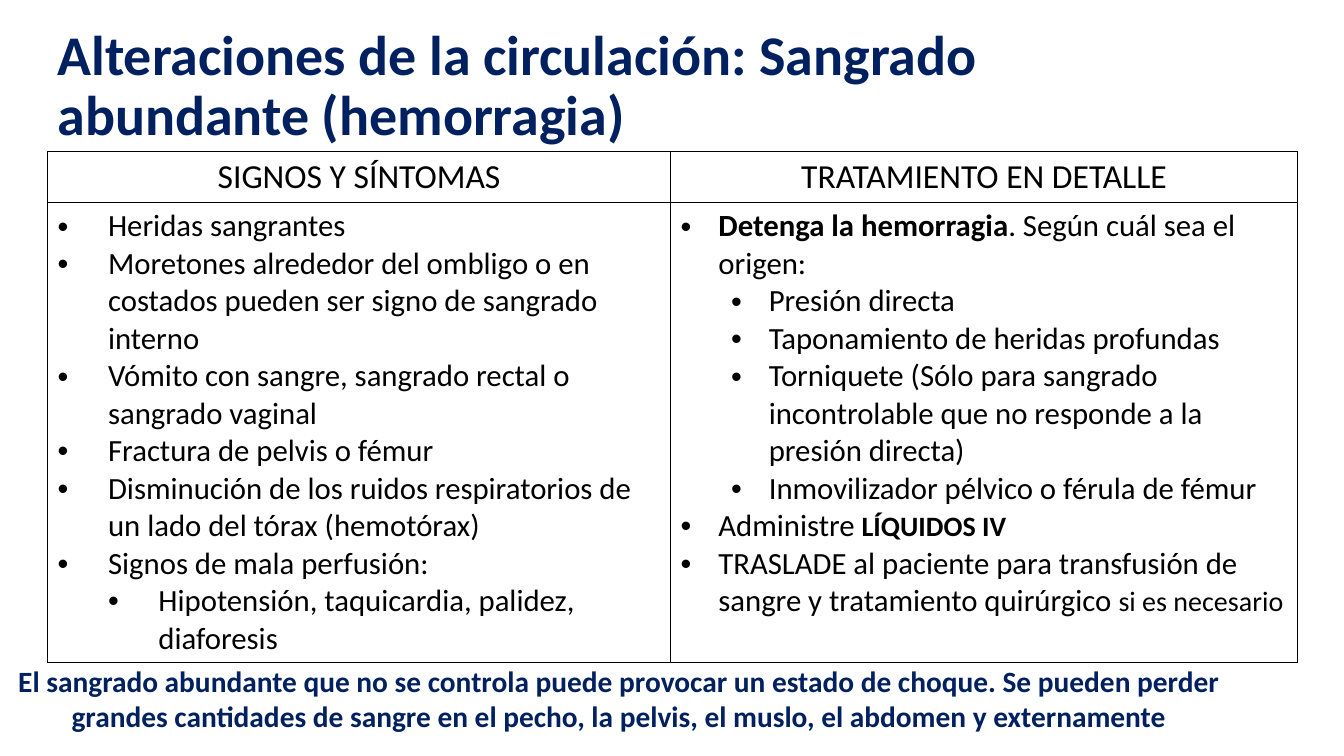
from dataclasses import dataclass

from lxml.etree import SubElement
from pptx import Presentation
from pptx.dml.color import RGBColor
from pptx.enum.text import MSO_ANCHOR, MSO_AUTO_SIZE, PP_ALIGN
from pptx.oxml.ns import qn
from pptx.util import Cm, Pt

FONT = "Calibri"
NAVY = "002060"
BLACK = "000000"
WHITE = "FFFFFF"
LEVEL_STEP = 1.27


@dataclass(frozen=True)
class Span:
    text: str
    size: float = 22
    bold: bool = False
    color: str = BLACK


@dataclass(frozen=True)
class Item:
    spans: tuple[Span, ...]
    level: int = 0


@dataclass(frozen=True)
class Column:
    heading: str
    width: float
    hanging: float
    items: tuple[Item, ...]


def item(text: str, level: int = 0) -> Item:
    return Item((Span(text),), level)


COLUMNS = (
    Column("SIGNOS Y SÍNTOMAS", 15.7, 1.27, (
        item("Heridas sangrantes"),
        item("Moretones alrededor del ombligo o en costados pueden ser signo de sangrado interno"),
        item("Vómito con sangre, sangrado rectal o sangrado vaginal"),
        item("Fractura de pelvis o fémur"),
        item("Disminución de los ruidos respiratorios de un lado del tórax (hemotórax)"),
        item("Signos de mala perfusión:"),
        item("Hipotensión, taquicardia, palidez, diaforesis", 1),
    )),
    Column("TRATAMIENTO EN DETALLE", 15.8, 0.95, (
        Item((Span("Detenga la hemorragia", bold=True), Span(". Según cuál sea el origen:"))),
        item("Presión directa", 1),
        item("Taponamiento de heridas profundas", 1),
        item("Torniquete (Sólo para sangrado incontrolable que no responde a la presión directa)", 1),
        item("Inmovilizador pélvico o férula de fémur", 1),
        Item((Span("Administre "), Span("LÍQUIDOS IV", 20, True))),
        Item((
            Span("TRASLADE al paciente para transfusión de sangre y tratamiento quirúrgico "),
            Span("si es necesario", 20),
        )),
    )),
)


def rgb(code: str) -> RGBColor:
    return RGBColor.from_string(code)


def add_span(paragraph, span: Span) -> None:
    run = paragraph.add_run()
    run.text = span.text
    run.font.name = FONT
    run.font.size = Pt(span.size)
    run.font.bold = span.bold
    run.font.color.rgb = rgb(span.color)


def add_bullet(paragraph, hanging: float, level: int) -> None:
    paragraph.level = level
    properties = paragraph._p.get_or_add_pPr()
    properties.set("marL", str(Cm(hanging + LEVEL_STEP * level)))
    properties.set("indent", str(-Cm(hanging)))
    SubElement(properties, qn("a:buFont"), typeface="Arial")
    SubElement(properties, qn("a:buChar"), char="•")


def style_cell(cell) -> None:
    properties = cell._tc.get_or_add_tcPr()
    for side in ("lnL", "lnR", "lnT", "lnB"):
        border = SubElement(properties, qn(f"a:{side}"), w=str(Pt(1)))
        fill = SubElement(border, qn("a:solidFill"))
        SubElement(fill, qn("a:srgbClr"), val=BLACK)
    cell.fill.solid()
    cell.fill.fore_color.rgb = rgb(WHITE)


def fill_list(cell, column: Column) -> None:
    frame = cell.text_frame
    for index, entry in enumerate(column.items):
        paragraph = frame.add_paragraph() if index else frame.paragraphs[0]
        add_bullet(paragraph, column.hanging, entry.level)
        for span in entry.spans:
            add_span(paragraph, span)


def add_title(slide) -> None:
    title = slide.shapes.title
    title.left, title.top, title.width, title.height = Cm(1.2), Cm(0.36), Cm(26.1), Cm(3.68)
    frame = title.text_frame
    frame.word_wrap = True
    frame.auto_size = MSO_AUTO_SIZE.NONE
    frame.vertical_anchor = MSO_ANCHOR.MIDDLE
    heading = frame.paragraphs[0]
    heading.alignment = PP_ALIGN.LEFT
    heading.line_spacing = 0.9
    add_span(heading, Span(
        "Alteraciones de la circulación: Sangrado abundante (hemorragia)", 40, True, NAVY))


def add_comparison(slide) -> None:
    width = sum(column.width for column in COLUMNS)
    table = slide.shapes.add_table(
        2, len(COLUMNS), Cm(1.2), Cm(3.82), Cm(width), Cm(12.87)).table
    table.first_row = False
    table.horz_banding = False
    table.rows[0].height, table.rows[1].height = Cm(1.28), Cm(11.59)
    for index, column in enumerate(COLUMNS):
        table.columns[index].width = Cm(column.width)
        heading_cell, list_cell = table.cell(0, index), table.cell(1, index)
        style_cell(heading_cell)
        style_cell(list_cell)
        heading = heading_cell.text_frame.paragraphs[0]
        heading.alignment = PP_ALIGN.CENTER
        add_span(heading, Span(column.heading, 24))
        fill_list(list_cell, column)


def add_warning(slide) -> None:
    frame = slide.shapes.add_textbox(Cm(0), Cm(16.59), Cm(31.2), Cm(2.06)).text_frame
    frame.word_wrap = True
    frame.auto_size = MSO_AUTO_SIZE.SHAPE_TO_FIT_TEXT
    warning = frame.paragraphs[0]
    warning.alignment = PP_ALIGN.CENTER
    add_span(warning, Span(
        "El sangrado abundante que no se controla puede provocar un estado de choque. "
        "Se pueden perder grandes cantidades de sangre en el pecho, la pelvis, el muslo, "
        "el abdomen y externamente", 21, True, NAVY))


def main() -> None:
    presentation = Presentation()
    presentation.slide_width, presentation.slide_height = Cm(33.87), Cm(19.05)
    slide = presentation.slides.add_slide(presentation.slide_layouts[5])
    add_title(slide)
    add_comparison(slide)
    add_warning(slide)
    presentation.save("out.pptx")


if __name__ == "__main__":
    main()
